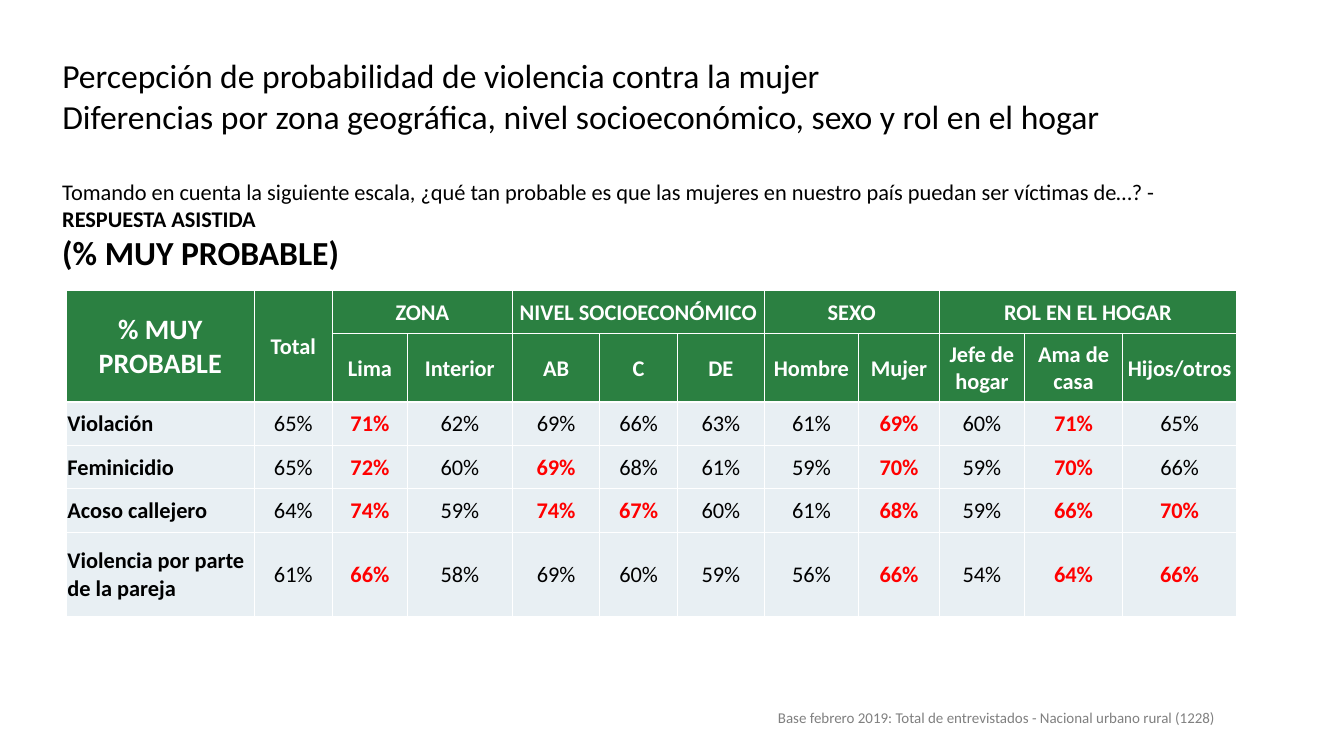
from dataclasses import dataclass

from lxml.etree import SubElement
from pptx import Presentation
from pptx.dml.color import RGBColor
from pptx.enum.text import MSO_ANCHOR, PP_ALIGN
from pptx.oxml.ns import qn
from pptx.util import Pt


@dataclass(frozen=True)
class Theme:
    """Colours, typeface and type sizes of the deck."""
    typeface: str = "Calibri"
    ink: str = "000000"
    muted: str = "808080"
    white: str = "FFFFFF"
    highlight: str = "FF0000"
    header_fill: str = "2B8041"
    body_fill: str = "E8EFF3"
    title_size: float = 24
    corner_size: float = 20
    text_size: float = 16
    note_size: float = 10.7
    border_width: float = 1


THEME = Theme()

COLUMN_WIDTHS = [134, 56, 53.5, 75, 62.5, 55.5, 62, 67.5, 57.5, 61, 70, 81.5]
ROW_HEIGHTS = [31, 36.7, 31, 31, 31, 60.5]
GROUPS = [
    ("ZONA", ["Lima", "Interior"]),
    ("NIVEL SOCIOECONÓMICO", ["AB", "C", "DE"]),
    ("SEXO", ["Hombre", "Mujer"]),
    ("ROL EN EL HOGAR", ["Jefe de hogar", "Ama de casa", "Hijos/otros"]),
]
RESULTS = [
    ("Violación", "65% 71%* 62% 69% 66% 63% 61% 69%* 60% 71%* 65%"),
    ("Feminicidio", "65% 72%* 60% 69%* 68% 61% 59% 70%* 59% 70%* 66%"),
    ("Acoso callejero", "64% 74%* 59% 74%* 67%* 60% 61% 68%* 59% 66%* 70%*"),
    ("Violencia por parte de la pareja",
     "61% 66%* 58% 69% 60% 59% 56% 66%* 54% 64%* 66%*"),
]


def style_paragraph(para, size, color, bold=False, align=PP_ALIGN.LEFT):
    """Set the alignment and font of a paragraph."""
    para.alignment = align
    para.font.name = THEME.typeface
    para.font.size = Pt(size)
    para.font.bold = bold
    para.font.color.rgb = RGBColor.from_string(color)


def add_text_frame(page, left, top, width, height):
    """Add a wrapping text box and return its frame."""
    box = page.shapes.add_textbox(Pt(left), Pt(top), Pt(width), Pt(height))
    box.text_frame.word_wrap = True
    return box.text_frame


def add_title(page, left, top, width, height):
    """Write the two title lines."""
    frame = add_text_frame(page, left, top, width, height)
    frame.text = ("Percepción de probabilidad de violencia contra la mujer\n"
                  "Diferencias por zona geográfica, nivel socioeconómico, "
                  "sexo y rol en el hogar")
    for para in frame.paragraphs:
        style_paragraph(para, THEME.title_size, THEME.ink)


def add_question(page, left, top, width, height):
    """Write the survey question and the measure shown."""
    frame = add_text_frame(page, left, top, width, height)
    question = frame.paragraphs[0]
    style_paragraph(question, THEME.text_size, THEME.ink)
    question.add_run().text = (
        "Tomando en cuenta la siguiente escala, ¿qué tan probable es que las "
        "mujeres en nuestro país puedan ser víctimas de…? - ")
    span = question.add_run()
    span.text = "RESPUESTA ASISTIDA"
    span.font.bold = True
    measure = frame.add_paragraph()
    measure.text = "(% MUY PROBABLE)"
    style_paragraph(measure, THEME.title_size, THEME.ink, bold=True)


def add_base_note(page, left, top, width, height):
    """Write the sample base at the foot of the page."""
    para = add_text_frame(page, left, top, width, height).paragraphs[0]
    para.text = ("Base febrero 2019: Total de entrevistados - "
                 "Nacional urbano rural (1228)")
    style_paragraph(para, THEME.note_size, THEME.muted, align=PP_ALIGN.JUSTIFY)
    para.line_spacing = 0.9


def format_cell(cell, fill):
    """Give a cell its margins, borders and fill."""
    cell.margin_left = cell.margin_right = cell.margin_top = Pt(0.7)
    cell.margin_bottom = 0
    cell.vertical_anchor = MSO_ANCHOR.MIDDLE
    properties = cell._tc.get_or_add_tcPr()
    for side in ("a:lnL", "a:lnR", "a:lnT", "a:lnB"):
        line = SubElement(properties, qn(side), w=str(Pt(THEME.border_width)))
        paint = SubElement(line, qn("a:solidFill"))
        SubElement(paint, qn("a:srgbClr"), val=THEME.white)
    cell.fill.solid()
    cell.fill.fore_color.rgb = RGBColor.from_string(fill)


def write_cell(cell, text, color, bold, size=THEME.text_size,
               align=PP_ALIGN.CENTER):
    """Write one styled paragraph in a cell."""
    cell.text = text
    style_paragraph(cell.text_frame.paragraphs[0], size, color, bold, align)


def fill_header(table):
    """Merge and label the two header rows."""
    for column, (label, size) in enumerate([
            ("% MUY PROBABLE", THEME.corner_size), ("Total", THEME.text_size)]):
        table.cell(0, column).merge(table.cell(1, column))
        write_cell(table.cell(0, column), label, THEME.white, True, size)
    column = 2
    for group, members in GROUPS:
        table.cell(0, column).merge(table.cell(0, column + len(members) - 1))
        write_cell(table.cell(0, column), group, THEME.white, True)
        for member in members:
            write_cell(table.cell(1, column), member, THEME.white, True)
            column += 1


def fill_results(table):
    """Write the result rows, with starred values highlighted."""
    for row, (label, values) in enumerate(RESULTS, start=2):
        write_cell(table.cell(row, 0), label, THEME.ink, True,
                   align=PP_ALIGN.LEFT)
        for column, value in enumerate(values.split(), start=1):
            starred = value.endswith("*")
            color = THEME.highlight if starred else THEME.ink
            write_cell(table.cell(row, column), value.rstrip("*"), color, starred)


def add_results_table(page, left, top, width, height):
    """Build the table of results by respondent group."""
    shape = page.shapes.add_table(len(ROW_HEIGHTS), len(COLUMN_WIDTHS),
                                  Pt(left), Pt(top), Pt(width), Pt(height))
    table = shape.table
    table.first_row = table.horz_banding = False
    for column, column_width in zip(table.columns, COLUMN_WIDTHS):
        column.width = Pt(column_width)
    for index, row_height in enumerate(ROW_HEIGHTS):
        table.rows[index].height = Pt(row_height)
        fill = THEME.header_fill if index < 2 else THEME.body_fill
        for cell in table.rows[index].cells:
            format_cell(cell, fill)
    shape.height = Pt(height)
    fill_header(table)
    fill_results(table)


def main():
    """Build and save the deck."""
    deck = Presentation()
    deck.slide_width, deck.slide_height = Pt(960), Pt(540)
    page = deck.slides.add_slide(deck.slide_layouts[6])
    add_base_note(page, 548.6, 504, 400, 18.7)
    add_title(page, 37.4, 36, 766.8, 96.5)
    add_question(page, 37.4, 123.8, 816.5, 74.9)
    add_results_table(page, 47.5, 207.4, sum(COLUMN_WIDTHS), 231.8)
    deck.save("out.pptx")


if __name__ == "__main__":
    main()
